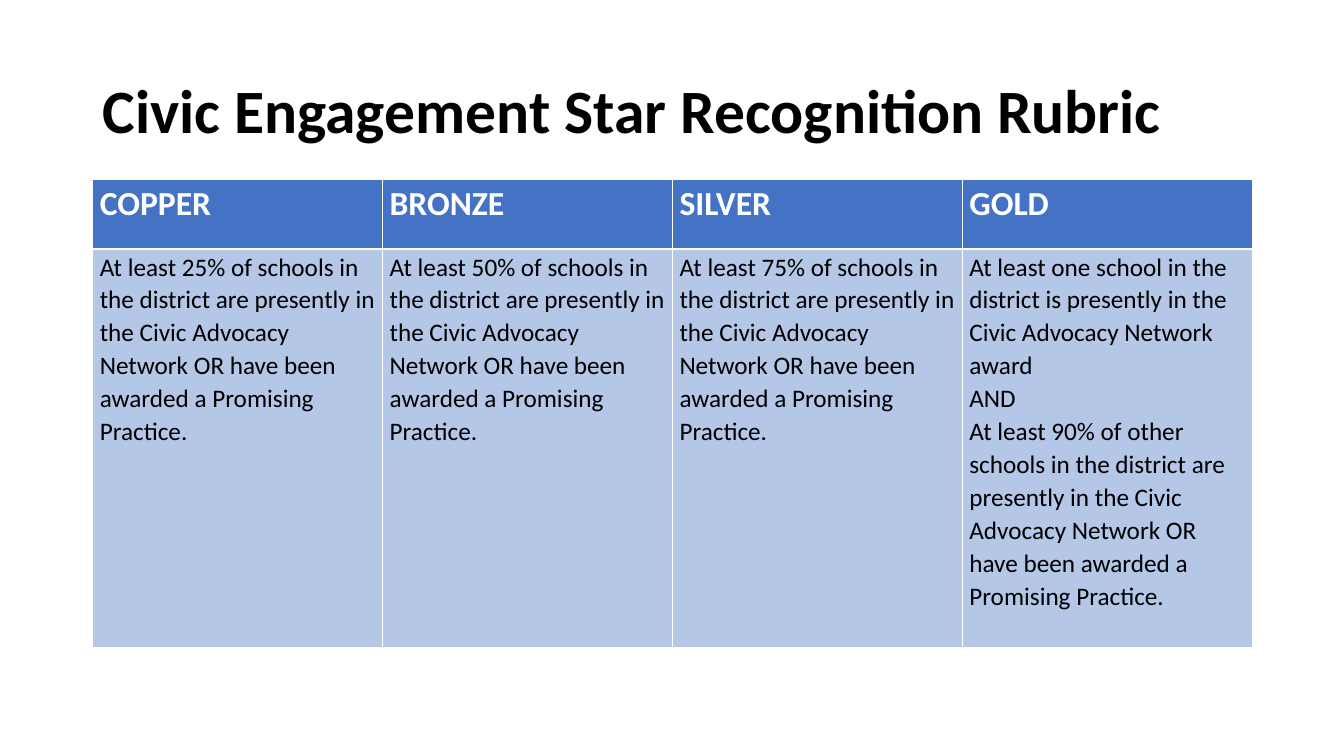
import pptx
import pptx.util
import pptx.dml.color
import pptx.enum.text

TITLE = "Civic Engagement Star Recognition Rubric"
SHARE = ("At least {} of schools in the district are presently in the Civic Advocacy "
         "Network OR have been awarded a Promising Practice.")
LEVELS = {
    "COPPER": [SHARE.format("25%")],
    "BRONZE": [SHARE.format("50%")],
    "SILVER": [SHARE.format("75%")],
    "GOLD": [
        "At least one school in the district is presently in the Civic Advocacy Network award",
        "AND",
        SHARE.format("90%").replace("of schools", "of other schools"),
    ],
}
ROW_STYLES = [
    {"height": 0.69, "fill": "4472C4", "size": 24, "color": "FFFFFF", "bold": True},
    {"height": 3.95, "fill": "B4C7E7", "size": 18, "color": "000000", "bold": False},
]
WIDTH, HEIGHT = 13.33, 7.5
MARGIN = 0.92
CONTENT_WIDTH = 11.5
TITLE_TOP, TITLE_HEIGHT = 0.4, 1.45
RUBRIC_TOP = 1.78

inches = pptx.util.Inches


def rgb(value):
    return pptx.dml.color.RGBColor.from_string(value)


def write(frame, lines, size, color, bold, spacing):
    frame.text = "\n".join(lines)
    for paragraph in frame.paragraphs:
        paragraph.line_spacing = spacing
        paragraph.alignment = pptx.enum.text.PP_ALIGN.LEFT
        for run in paragraph.runs:
            run.font.name = "Calibri"
            run.font.size = pptx.util.Pt(size)
            run.font.bold = bold
            run.font.color.rgb = rgb(color)


def add_title(slide):
    title = slide.shapes.title
    title.left, title.top = inches(MARGIN), inches(TITLE_TOP)
    title.width, title.height = inches(CONTENT_WIDTH), inches(TITLE_HEIGHT)
    write(title.text_frame, [TITLE], 44, "000000", True, 0.9)
    title.text_frame.vertical_anchor = pptx.enum.text.MSO_ANCHOR.MIDDLE


def add_rubric(slide):
    total_height = sum(style["height"] for style in ROW_STYLES)
    rubric = slide.shapes.add_table(
        len(ROW_STYLES), len(LEVELS), inches(MARGIN), inches(RUBRIC_TOP),
        inches(CONTENT_WIDTH), inches(total_height)).table
    rubric.horz_banding = False
    for row, style in zip(rubric.rows, ROW_STYLES):
        row.height = inches(style["height"])
    for column, (level, criteria) in enumerate(LEVELS.items()):
        for row, (lines, style) in enumerate(zip([[level], criteria], ROW_STYLES)):
            cell = rubric.cell(row, column)
            cell.fill.solid()
            cell.fill.fore_color.rgb = rgb(style["fill"])
            cell.margin_left, cell.margin_right = inches(0.07), inches(0.02)
            cell.margin_top, cell.margin_bottom = inches(0.01), 0
            write(cell.text_frame, lines, style["size"], style["color"], style["bold"], 1.07)


def main():
    deck = pptx.Presentation()
    deck.slide_width, deck.slide_height = inches(WIDTH), inches(HEIGHT)
    slide = deck.slides.add_slide(deck.slide_layouts.get_by_name("Title Only"))
    add_title(slide)
    add_rubric(slide)
    deck.save("out.pptx")


if __name__ == "__main__":
    main()
